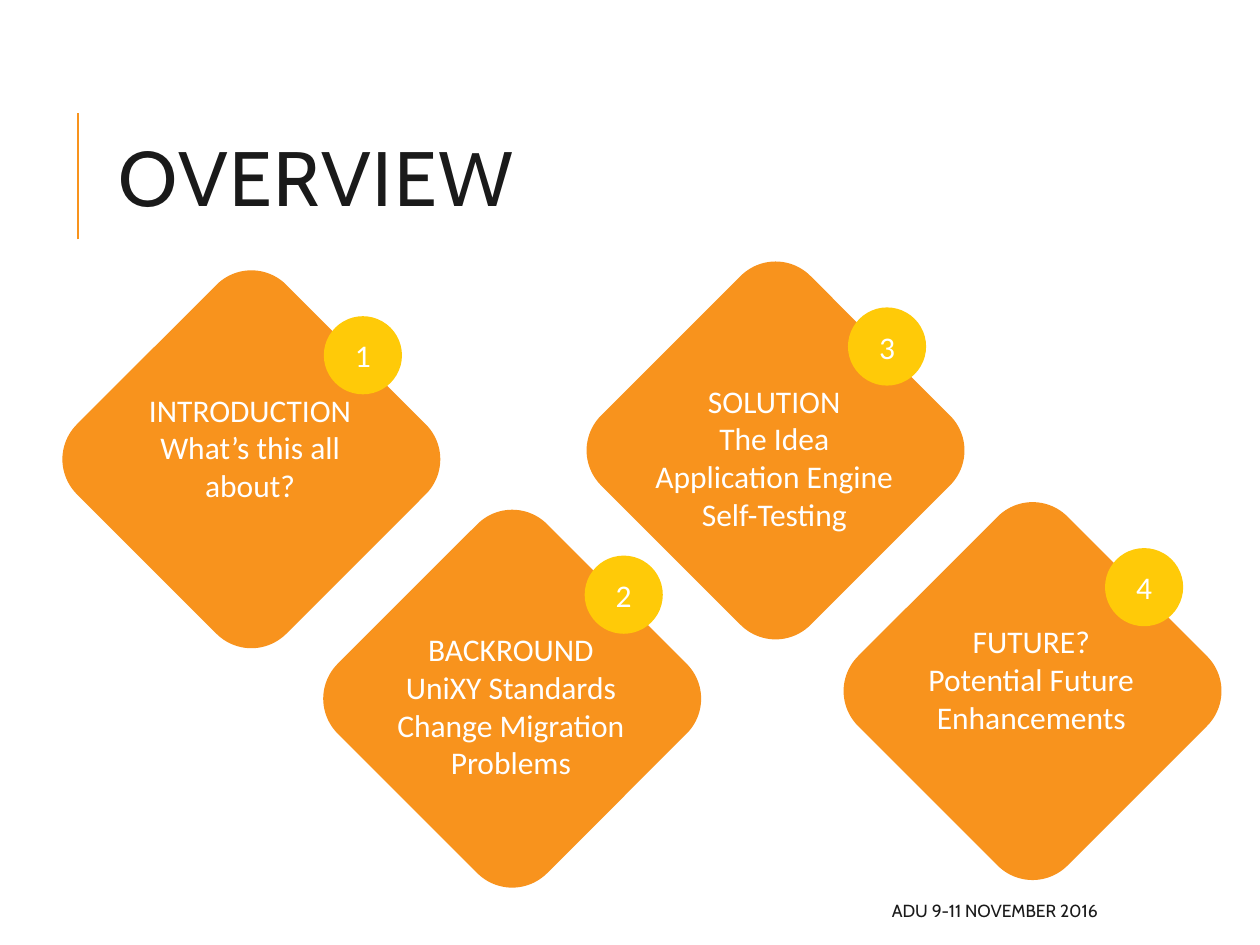
from lxml import etree
from pptx import Presentation
from pptx.dml.color import RGBColor
from pptx.enum.shapes import MSO_CONNECTOR, MSO_SHAPE
from pptx.enum.text import MSO_ANCHOR, MSO_AUTO_SIZE, PP_ALIGN
from pptx.oxml.ns import qn
from pptx.util import Inches, Pt

ORANGE = RGBColor(0xF8, 0x93, 0x1D)
GOLD = RGBColor(0xFF, 0xCA, 0x08)
WHITE = RGBColor(0xFF, 0xFF, 0xFF)
INK = RGBColor(0x1A, 0x1A, 0x1A)

LEFT, CENTER, RIGHT = PP_ALIGN.LEFT, PP_ALIGN.CENTER, PP_ALIGN.RIGHT
TOP, MIDDLE = MSO_ANCHOR.TOP, MSO_ANCHOR.MIDDLE
SQUARE, CIRCLE = MSO_SHAPE.ROUNDED_RECTANGLE, MSO_SHAPE.OVAL

HEAD = {"name": "Cabin", "size": Pt(44), "bold": False}
BODY = {"name": "Calibri", "size": Pt(18)}
FOOT = {"name": "Cabin", "size": Pt(10)}

SIDE = 2.35   # side of a tile before it is turned
TOPICS = [
    (0.82, 2.47, ["INTRODUCTION", "What’s this all about?"], 1.01),
    (2.89, 4.37, ["BACKROUND", "UniXY Standards", "Change Migration", "Problems"], 1.31),
    (4.98, 2.40, ["SOLUTION", "The Idea", "Application Engine", "Self-Testing"], 1.31),
    (7.02, 4.31, ["FUTURE?", "Potential Future Enhancements"], 1.01),
]


def box(*sizes):
    return [Inches(size) for size in sizes]


def write(frame, lines, style, color, align, anchor):
    """Fill a text frame, one paragraph a line."""
    frame.word_wrap = True
    frame.vertical_anchor = anchor
    for i, line in enumerate(lines):
        par = frame.add_paragraph() if i else frame.paragraphs[0]
        par.alignment = align
        run = par.add_run()
        run.text = line
        for key, value in style.items():
            setattr(run.font, key, value)
        run.font.color.rgb = color


def add_solid(slide, kind, place, color):
    shape = slide.shapes.add_shape(kind, *box(*place))
    shape.shadow.inherit = False
    shape.fill.solid()
    shape.fill.fore_color.rgb = color
    shape.line.fill.background()
    return shape


def add_header(slide, left, top, width, height):
    """Place the title and the rule to its left."""
    rule_x, rule_top = left - 0.22, top + 0.26
    rule = slide.shapes.add_connector(
        MSO_CONNECTOR.STRAIGHT, *box(rule_x, rule_top + 1, rule_x, rule_top))
    rule.line.color.rgb = ORANGE
    rule.line.width = Pt(1.5)
    etree.SubElement(rule._element.spPr, qn("a:effectLst"))

    title = slide.shapes.title
    title.left, title.top, title.width, title.height = box(left, top, width, height)
    write(title.text_frame, ["OVERVIEW"], HEAD, INK, LEFT, MIDDLE)
    par = title.text_frame.paragraphs[0]
    par.line_spacing = 0.8
    par.runs[0]._r.get_or_add_rPr().set("spc", "100")


def add_topic(slide, number, left, top, lines, height):
    """Place a turned tile with its numbered badge and text."""
    tile = add_solid(slide, SQUARE, (left, top, SIDE, SIDE), ORANGE)
    tile.rotation = 45
    badge = add_solid(slide, CIRCLE, (left + 1.75, top + 0.04, 0.62, 0.62), GOLD)
    write(badge.text_frame, [str(number)], BODY, WHITE, CENTER, MIDDLE)
    label = slide.shapes.add_textbox(*box(left + 0.04, top + 0.58, 2.25, height))
    write(label.text_frame, lines, BODY, WHITE, CENTER, TOP)
    label.text_frame.auto_size = MSO_AUTO_SIZE.SHAPE_TO_FIT_TEXT


def add_footer(slide, left, top, width, height):
    note = slide.shapes.add_textbox(*box(left, top, width, height))
    write(note.text_frame, ["ADU 9-11 NOVEMBER 2016"], FOOT, INK, RIGHT, MIDDLE)


def main():
    deck = Presentation()
    deck.slide_width, deck.slide_height = box(10, 7.5)
    slide = deck.slides.add_slide(deck.slide_layouts[5])
    add_header(slide, 0.84, 0.64, 7.97, 1.64)
    for number, topic in enumerate(TOPICS, 1):
        add_topic(slide, number, *topic)
    add_footer(slide, 3.97, 7.08, 4.84, 0.3)
    deck.save("out.pptx")


if __name__ == "__main__":
    main()
